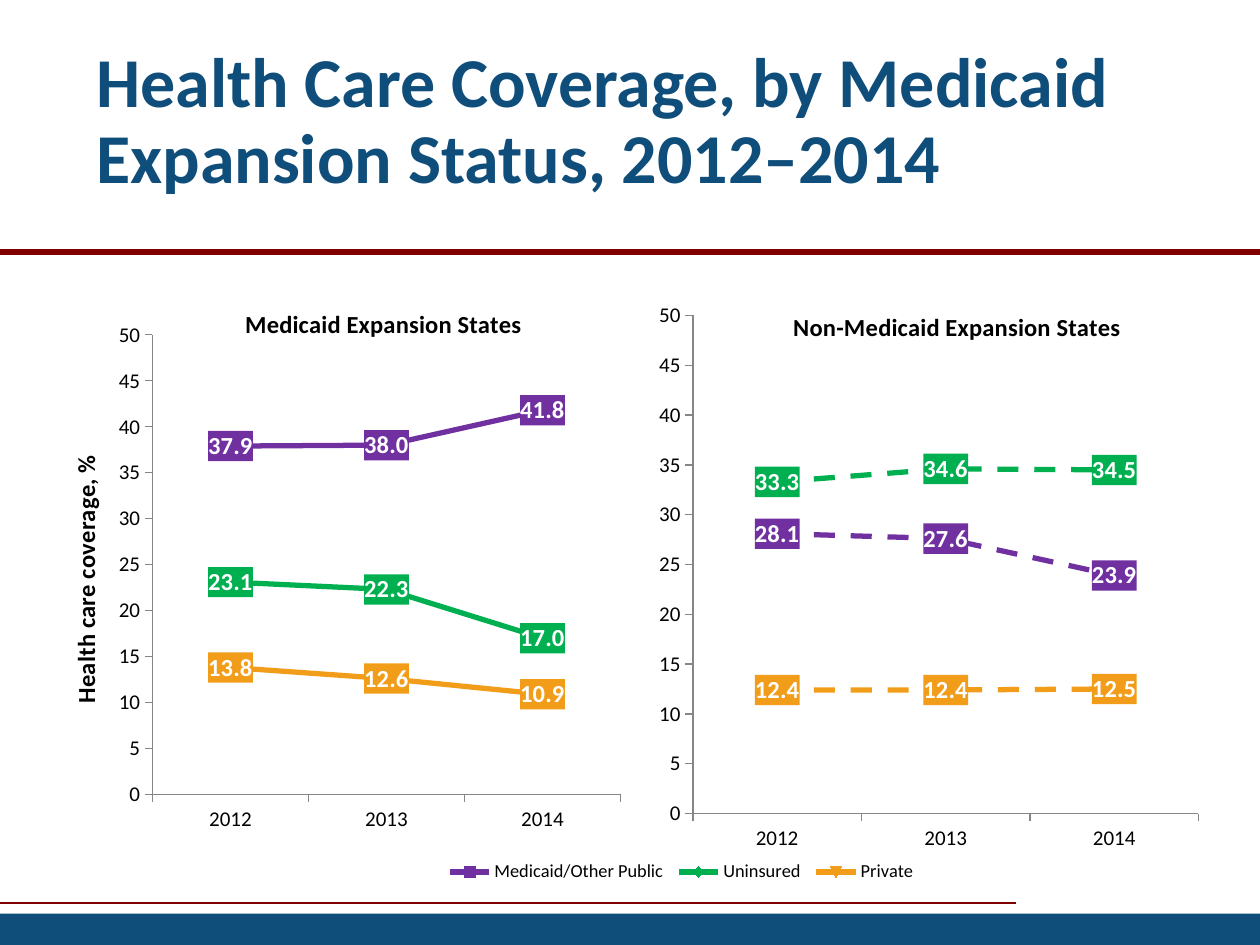
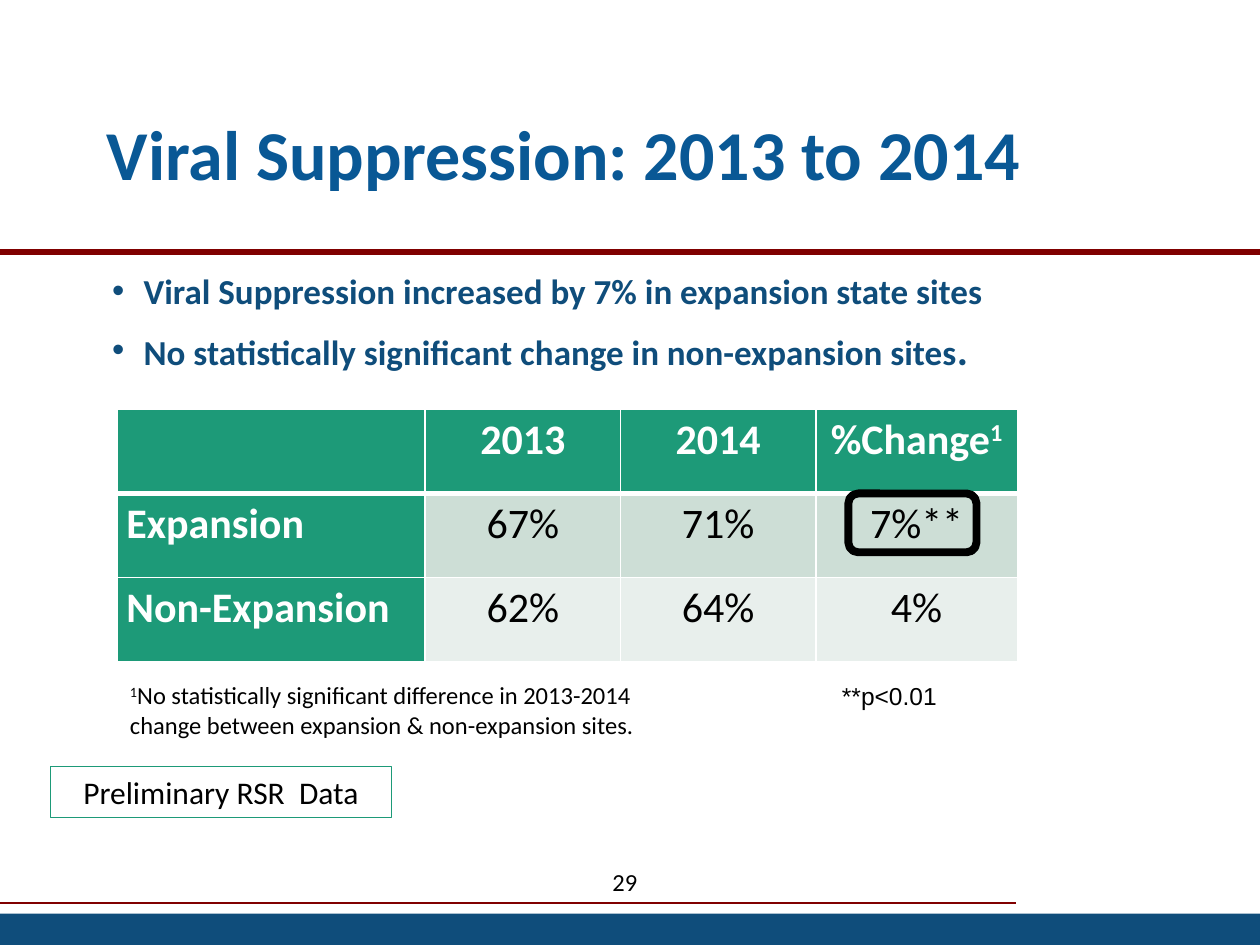
from dataclasses import dataclass, field
from typing import Any, NamedTuple

from lxml import etree
from pptx import Presentation
from pptx.chart.data import CategoryChartData
from pptx.dml.color import RGBColor
from pptx.enum.chart import XL_CHART_TYPE as CT
from pptx.enum.chart import XL_LABEL_POSITION as LP
from pptx.enum.chart import XL_LEGEND_POSITION as LEG
from pptx.enum.chart import XL_TICK_MARK as TICK
from pptx.enum.dml import MSO_LINE as DASH
from pptx.enum.shapes import MSO_CONNECTOR as CONN
from pptx.enum.shapes import MSO_SHAPE as SHAPE
from pptx.enum.text import MSO_ANCHOR as ANC
from pptx.enum.text import PP_ALIGN as AL
from pptx.oxml import parse_xml
from pptx.oxml.ns import nsdecls, qn
from pptx.util import Inches, Pt

COLS, ROWS = 120, 90
WIDTH, HEIGHT = Inches(10), Inches(7.5)
C = {
    "navy": "0F4D7B", "blue": "095895", "maroon": "800000", "teal": "1D9A78",
    "mint": "CDDED6", "pale": "E8EFEC", "white": "FFFFFF", "black": "000000",
    "purple": "7030A0", "green": "00B050", "orange": "F19D19", "axis": "868686",
}


class Box(NamedTuple):
    col: float
    row: float
    cols: float
    rows: float

    def emu(self) -> tuple[int, int, int, int]:
        return x(self.col), y(self.row), x(self.cols), y(self.rows)


class Run(NamedTuple):
    text: str
    fmt: dict[str, Any] = {}
    superscript: bool = False


class Rule(NamedTuple):
    row: float
    end: float
    width: float


class Trend(NamedTuple):
    name: str
    values: tuple[float, ...]
    color: str


@dataclass
class Text:
    box: Box
    paras: list[list[Run]]
    font: dict[str, Any]
    frame: dict[str, Any] = field(default_factory=dict)
    para: dict[str, Any] = field(default_factory=dict)
    bullet: bool = False


@dataclass
class Panel:
    box: Box
    title: str
    title_at: tuple[float, float]
    plot: tuple[float, float, float, float]
    trends: list[Trend]
    dashed: bool = False
    axis_title: str = ""
    axis_title_at: tuple[float, float] = (0, 0)
    legend: tuple[float, ...] = ()


def x(cols: float) -> int:
    return round(WIDTH * cols / COLS)


def y(rows: float) -> int:
    return round(HEIGHT * rows / ROWS)


def rgb(name: str) -> RGBColor:
    return RGBColor.from_string(C[name])


def apply(obj: Any, fmt: dict[str, Any]) -> None:
    for key, value in fmt.items():
        if key == "color":
            obj.color.rgb = rgb(value)
        else:
            setattr(obj, key, value)


def font(size: float, color: str = "black", bold: bool = False, name: str = "Calibri") -> dict[str, Any]:
    return {"size": Pt(size), "color": color, "bold": bold, "name": name}


def solid(color: str) -> str:
    return f'<a:solidFill><a:srgbClr val="{C[color]}"/></a:solidFill>'


def add_runs(p: Any, runs: list[Run], base: dict[str, Any]) -> None:
    for run in runs:
        r = p.add_run()
        r.text = run.text
        apply(r.font, base | run.fmt)
        if run.superscript:
            r.font._element.set("baseline", "30000")


def add_bullet(p: Any) -> None:
    pPr = p._p.get_or_add_pPr()
    pPr.set("marL", str(Inches(0.25)))
    pPr.set("indent", str(-Inches(0.25)))
    pPr.append(parse_xml(f'<a:buFont {nsdecls("a")} typeface="Arial"/>'))
    pPr.append(parse_xml(f'<a:buChar {nsdecls("a")} char="•"/>'))


def fill_frame(tf: Any, t: Text) -> None:
    apply(tf, {"word_wrap": True} | t.frame)
    for i, runs in enumerate(t.paras):
        p = tf.paragraphs[0] if i == 0 else tf.add_paragraph()
        if t.bullet:
            add_bullet(p)
        apply(p, t.para)
        if i == 0:
            p.space_before = Pt(0)
        add_runs(p, runs, t.font)


def add_text(s: Any, t: Text) -> None:
    fill_frame(s.shapes.add_textbox(*t.box.emu()).text_frame, t)


def add_title(s: Any, box: Box, text: str, color: str) -> None:
    add_text(s, Text(box, [[Run(text)]], font(40, color, True),
                     {"vertical_anchor": ANC.MIDDLE}, {"line_spacing": 0.9}))


def add_outline(s: Any, kind: Any, box: Box, color: str, width: float) -> Any:
    sp = s.shapes.add_shape(kind, *box.emu())
    sp.shadow.inherit = False
    sp.fill.background()
    apply(sp.line, {"color": color, "width": Pt(width)})
    return sp


def add_rule(s: Any, rule: Rule) -> None:
    ln = s.shapes.add_connector(CONN.STRAIGHT, 0, y(rule.row), x(rule.end), y(rule.row))
    apply(ln.line, {"color": "maroon", "width": Pt(rule.width)})
    etree.SubElement(ln._element.spPr, qn("a:effectLst"))


def new_slide(prs: Any) -> Any:
    s = prs.slides.add_slide(prs.slide_layouts[6])
    band = s.shapes.add_shape(SHAPE.RECTANGLE, *Box(0, 87, COLS, 3).emu())
    band.shadow.inherit = False
    band.fill.solid()
    band.fill.fore_color.rgb = rgb("navy")
    band.line.fill.background()
    for rule in (Rule(86, 96.8, 1.5), Rule(24, COLS, 3)):
        add_rule(s, rule)
    return s


def place(el: Any, index: int, spots: tuple[float, ...], inner: bool = False) -> None:
    for old in el.findall(qn("c:layout")):
        el.remove(old)
    tags = ["xMode", "yMode"]
    parts = ['<c:layoutTarget val="inner"/>'] if inner else []
    parts += [f'<c:{tag} val="edge"/>' for tag in tags]
    parts += [f'<c:{tag} val="{v}"/>' for tag, v in zip("xywh", spots)]
    el.insert(index, parse_xml(f'<c:layout {nsdecls("c")}><c:manualLayout>'
                               f'{"".join(parts)}</c:manualLayout></c:layout>'))


def add_chart_text(title: Any, text: str, spot: tuple[float, float]) -> None:
    add_runs(title.text_frame.paragraphs[0], [Run(text)], font(14, bold=True))
    place(title._element, 1, spot)


def style_trend(series: Any, trend: Trend, dashed: bool) -> None:
    series.smooth = False
    apply(series.format.line, {"color": trend.color, "width": Pt(3)})
    if dashed:
        series.format.line.dash_style = DASH.DASH
    marker = series.marker
    marker.size = 5
    marker.format.fill.solid()
    marker.format.fill.fore_color.rgb = rgb(trend.color)
    marker.format.line.color.rgb = rgb(trend.color)
    labels = series.data_labels
    apply(labels, {"show_value": True, "number_format": "#,##0.0",
                   "number_format_is_linked": False, "position": LP.CENTER})
    apply(labels.font, font(14, "white", True))
    labels._element.find(qn("c:txPr")).addprevious(
        parse_xml(f'<c:spPr {nsdecls("c", "a")}>{solid(trend.color)}</c:spPr>'))


def add_panel(s: Any, panel: Panel) -> None:
    data = CategoryChartData(number_format="0.0")
    data.categories = ["2012", "2013", "2014"]
    for trend in panel.trends:
        data.add_series(trend.name, trend.values)
    chart = s.shapes.add_chart(CT.LINE_MARKERS, *panel.box.emu(), data).chart
    apply(chart.font, font(18))
    chart._chartSpace.find(qn("c:chart")).addnext(
        parse_xml(f'<c:spPr {nsdecls("c", "a")}><a:noFill/><a:ln><a:noFill/></a:ln></c:spPr>'))
    chart.has_title = True
    add_chart_text(chart.chart_title, panel.title, panel.title_at)
    plot = chart.plots[0]
    plot.vary_by_categories = False
    place(chart._chartSpace.find(".//" + qn("c:plotArea")), 0, panel.plot, True)
    for axis in (chart.category_axis, chart.value_axis):
        apply(axis, {"major_tick_mark": TICK.OUTSIDE, "minor_tick_mark": TICK.NONE,
                     "has_major_gridlines": False})
        apply(axis.format.line, {"color": "axis", "width": Pt(0.75)})
        apply(axis.tick_labels.font, font(12))
    apply(chart.value_axis, {"minimum_scale": 0, "maximum_scale": 50, "major_unit": 5})
    apply(chart.value_axis.tick_labels, {"number_format": "0", "number_format_is_linked": False})
    if panel.axis_title:
        add_chart_text(chart.value_axis.axis_title, panel.axis_title, panel.axis_title_at)
    chart.has_legend = bool(panel.legend)
    if panel.legend:
        apply(chart.legend, {"position": LEG.BOTTOM, "include_in_layout": False})
        apply(chart.legend.font, font(10.5))
        place(chart.legend._element, 1, panel.legend)
    for series, trend in zip(plot.series, panel.trends):
        style_trend(series, trend, panel.dashed)


def border_cell(cell: Any, widths: dict[str, float]) -> None:
    tcPr = cell._tc.get_or_add_tcPr()
    for i, (side, width) in enumerate(widths.items()):
        tcPr.insert(i, parse_xml(f'<a:ln{side} {nsdecls("a")} w="{Pt(width)}">{solid("white")}</a:ln{side}>'))


def add_rates(s: Any, box: Box, widths: list[float], rows: list[list[list[Run]]]) -> None:
    table = s.shapes.add_table(len(rows), len(widths), *box.emu()).table
    for column, width in zip(table.columns, widths):
        column.width = x(width)
    for i, row in enumerate(rows):
        table.rows[i].height = y(box.rows / len(rows))
        for j, runs in enumerate(row):
            cell = table.cell(i, j)
            head = i == 0 or j == 0
            apply(cell, {"margin_left": Inches(0.07), "margin_right": Inches(0.07),
                         "margin_top": 0, "margin_bottom": 0})
            cell.fill.solid()
            cell.fill.fore_color.rgb = rgb("teal" if head else ("mint", "pale")[i - 1])
            border_cell(cell, {"L": 1, "R": 1, "T": 3 if i == 1 else 1, "B": 3 if i == 0 else 1})
            p = cell.text_frame.paragraphs[0]
            apply(p, {"line_spacing": 1.1, "alignment": AL.CENTER if j else AL.LEFT})
            add_runs(p, runs, font(24, "white" if head else "black", head))


def coverage_slide(prs: Any) -> None:
    s = new_slide(prs)
    add_title(s, Box(8, 3, 109.8, 17.4),
              "Health Care Coverage, by Medicaid Expansion Status, 2012–2014", "navy")
    public, uninsured, private = "Medicaid/Other Public", "Uninsured", "Private"
    add_panel(s, Panel(
        Box(5, 27, 112, 59), "Medicaid Expansion States", (0.16, 0.03), (0.085, 0.083, 0.398, 0.742),
        [Trend(public, (37.9, 38.0, 41.8), "purple"),
         Trend(uninsured, (23.1, 22.3, 17.0), "green"),
         Trend(private, (13.8, 12.6, 10.9), "orange")],
        axis_title="Health care coverage, %", axis_title_at=(0.01, 0.27),
        legend=(0.33, 0.92, 0.41, 0.06)))
    add_panel(s, Panel(
        Box(60, 25, 56, 58), "Non-Medicaid Expansion States", (0.27, 0.07), (0.107, 0.087, 0.86, 0.818),
        [Trend(uninsured, (33.3, 34.6, 34.5), "green"),
         Trend(public, (28.1, 27.6, 23.9), "purple"),
         Trend(private, (12.4, 12.4, 12.5), "orange")], dashed=True))


def suppression_slide(prs: Any) -> None:
    s = new_slide(prs)
    add_title(s, Box(9, 9, 105.6, 12.1), "Viral Suppression: 2013 to 2014", "blue")
    add_text(s, Text(
        Box(9.5, 25.5, 101.3, 55),
        [[Run("Viral Suppression increased by 7% in expansion state sites")],
         [Run("No statistically significant change in non-expansion sites"), Run(".", {"size": Pt(24)})]],
        font(20, "navy", True), para={"line_spacing": 0.9, "space_before": Pt(10)}, bullet=True))
    add_rates(s, Box(11.2, 39, 85.7, 24), [29.3, 18.6, 18.6, 19.2], [
        [[], [Run("2013")], [Run("2014")], [Run("%Change"), Run("1", superscript=True)]],
        [[Run(t)] for t in ("Expansion", "67%", "71%", "7%**")],
        [[Run(t)] for t in ("Non-Expansion", "62%", "64%", "4%")]])
    add_text(s, Text(Box(79, 64.2, 15.5, 4.1), [[Run("**p<0.01")]], font(14, name="Arial"),
                     {"vertical_anchor": ANC.MIDDLE}))
    stamp = Text(Box(4.8, 73, 32.5, 4.9), [[Run("Preliminary RSR  Data")]], font(18),
                 {"vertical_anchor": ANC.MIDDLE}, {"alignment": AL.CENTER})
    fill_frame(add_outline(s, SHAPE.RECTANGLE, stamp.box, "teal", 0.5).text_frame, stamp)
    add_text(s, Text(
        Box(11.2, 64.2, 51.8, 6.8),
        [[Run("1", superscript=True), Run("No statistically significant difference in 2013-2014")],
         [Run("change between expansion & non-expansion sites.")]],
        font(14), {"word_wrap": False}))
    add_outline(s, SHAPE.ROUNDED_RECTANGLE, Box(80.8, 47, 12.2, 5.6), "black", 4.5)
    add_text(s, Text(Box(46, 82, 27, 3.8), [[Run("29")]], font(14), para={"alignment": AL.CENTER}))


def main() -> None:
    prs = Presentation()
    apply(prs, {"slide_width": WIDTH, "slide_height": HEIGHT})
    coverage_slide(prs)
    suppression_slide(prs)
    prs.save("out.pptx")


if __name__ == "__main__":
    main()
